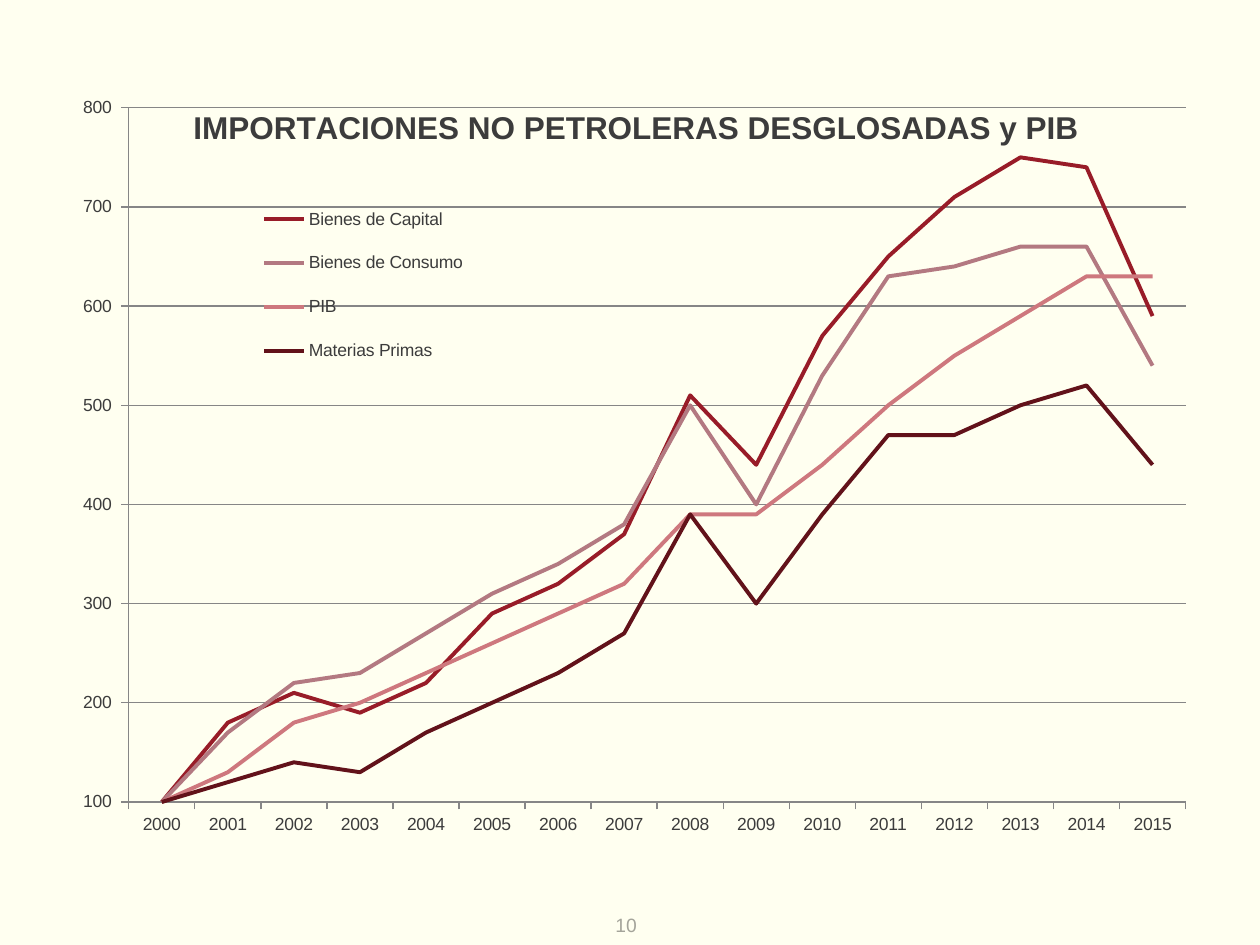
from lxml.etree import SubElement
from pptx import Presentation
from pptx.chart.data import CategoryChartData
from pptx.dml.color import RGBColor
from pptx.enum.chart import XL_CHART_TYPE, XL_LEGEND_POSITION, XL_TICK_MARK
from pptx.enum.text import MSO_ANCHOR, PP_ALIGN
from pptx.oxml import parse_xml
from pptx.oxml.ns import nsdecls, qn
from pptx.util import Pt

IVORY = RGBColor(0xFF, 0xFF, 0xF0)
CHARCOAL = RGBColor(0x3C, 0x3C, 0x3C)
NUMBER_GREY = RGBColor(0xA4, 0xA4, 0x9A)
AXIS_GREY = RGBColor(0x86, 0x86, 0x86)
CRIMSON = RGBColor(0x98, 0x1C, 0x28)
MAUVE = RGBColor(0xB3, 0x79, 0x81)
ROSE = RGBColor(0xCE, 0x78, 0x7E)
BURGUNDY = RGBColor(0x62, 0x12, 0x1A)

SERIES = [
    ("Bienes de Capital", CRIMSON,
     [100, 180, 210, 190, 220, 290, 320, 370, 510, 440, 570, 650, 710, 750, 740, 590]),
    ("Bienes de Consumo", MAUVE,
     [100, 170, 220, 230, 270, 310, 340, 380, 500, 400, 530, 630, 640, 660, 660, 540]),
    ("PIB", ROSE,
     [100, 130, 180, 200, 230, 260, 290, 320, 390, 390, 440, 500, 550, 590, 630, 630]),
    ("Materias Primas", BURGUNDY,
     [100, 120, 140, 130, 170, 200, 230, 270, 390, 300, 390, 470, 470, 500, 520, 440]),
]


def format_font(font, color, **values):
    font.color.rgb = color
    for name, value in {"name": "Arial", **values}.items():
        setattr(font, name, value)


def place_in_chart(element, index, **values):
    """Give a chart part a manual layout, in fractions of the chart area."""
    for old_layout in element.findall(qn("c:layout")):
        element.remove(old_layout)
    layout = parse_xml(f"<c:layout {nsdecls('c')}><c:manualLayout/></c:layout>")
    for tag, value in values.items():
        SubElement(layout[0], qn(f"c:{tag}")).set("val", str(value))
    element.insert(index, layout)


presentation = Presentation()
presentation.slide_width = Pt(720)
presentation.slide_height = Pt(540)
slide = presentation.slides.add_slide(presentation.slide_layouts[6])
slide.background.fill.solid()
slide.background.fill.fore_color.rgb = IVORY

# Line chart
chart_data = CategoryChartData()
chart_data.categories = [str(year) for year in range(2000, 2016)]
for name, color, values in SERIES:
    chart_data.add_series(name, values)
chart = slide.shapes.add_chart(
    XL_CHART_TYPE.LINE, Pt(36), Pt(42), Pt(648), Pt(456), chart_data).chart
format_font(chart.font, CHARCOAL, size=Pt(10))
chart.plots[0].vary_by_categories = False
for series, (name, color, values) in zip(chart.plots[0].series, SERIES):
    series.smooth = False
    series.format.line.width = Pt(2.25)
    series.format.line.color.rgb = color

# Axes
value_axis = chart.value_axis
value_axis.minimum_scale = 100
value_axis.maximum_scale = 800
value_axis.major_unit = 100
value_axis.has_major_gridlines = True
value_axis.tick_labels.number_format = '_(* #,##0_);_(* \\(#,##0\\);_(* "-"??_);_('
value_axis.tick_labels.number_format_is_linked = False
for axis in (value_axis, chart.category_axis):
    axis.major_tick_mark = XL_TICK_MARK.OUTSIDE
    axis.minor_tick_mark = XL_TICK_MARK.NONE
for lines in (value_axis, chart.category_axis, value_axis.major_gridlines):
    lines.format.line.color.rgb = AXIS_GREY
    lines.format.line.width = Pt(0.75)

# Title and legend lie over the plot
chart.has_title = True
title_paragraph = chart.chart_title.text_frame.paragraphs[0]
title_paragraph.text = "IMPORTACIONES NO PETROLERAS DESGLOSADAS y PIB"
format_font(title_paragraph.runs[0].font, CHARCOAL, size=Pt(18), bold=True)
chart.has_legend = True
chart.legend.position = XL_LEGEND_POSITION.RIGHT
chart.legend.include_in_layout = False
format_font(chart.legend.font, CHARCOAL, size=Pt(10))

edge = {"xMode": "edge", "yMode": "edge"}
place_in_chart(chart._chartSpace.chart.plotArea, 0, layoutTarget="inner", **edge,
               x=0.058, y=0.043, w=0.932, h=0.87)
place_in_chart(chart.chart_title._element, 1, **edge, x=0.11, y=0.035)
place_in_chart(chart.legend._element, 1, **edge, x=0.165, y=0.14, w=0.2, h=0.25)

# Slide number
number_frame = slide.shapes.add_textbox(Pt(339), Pt(517.5), Pt(37.5), Pt(22.5)).text_frame
number_format = {
    "word_wrap": True, "vertical_anchor": MSO_ANCHOR.MIDDLE,
    "margin_left": 0, "margin_right": 0, "margin_top": 0, "margin_bottom": 0,
}
for name, value in number_format.items():
    setattr(number_frame, name, value)
number_paragraph = number_frame.paragraphs[0]
number_paragraph.text = "10"
number_paragraph.alignment = PP_ALIGN.CENTER
format_font(number_paragraph.runs[0].font, NUMBER_GREY, size=Pt(11))

presentation.save("out.pptx")
